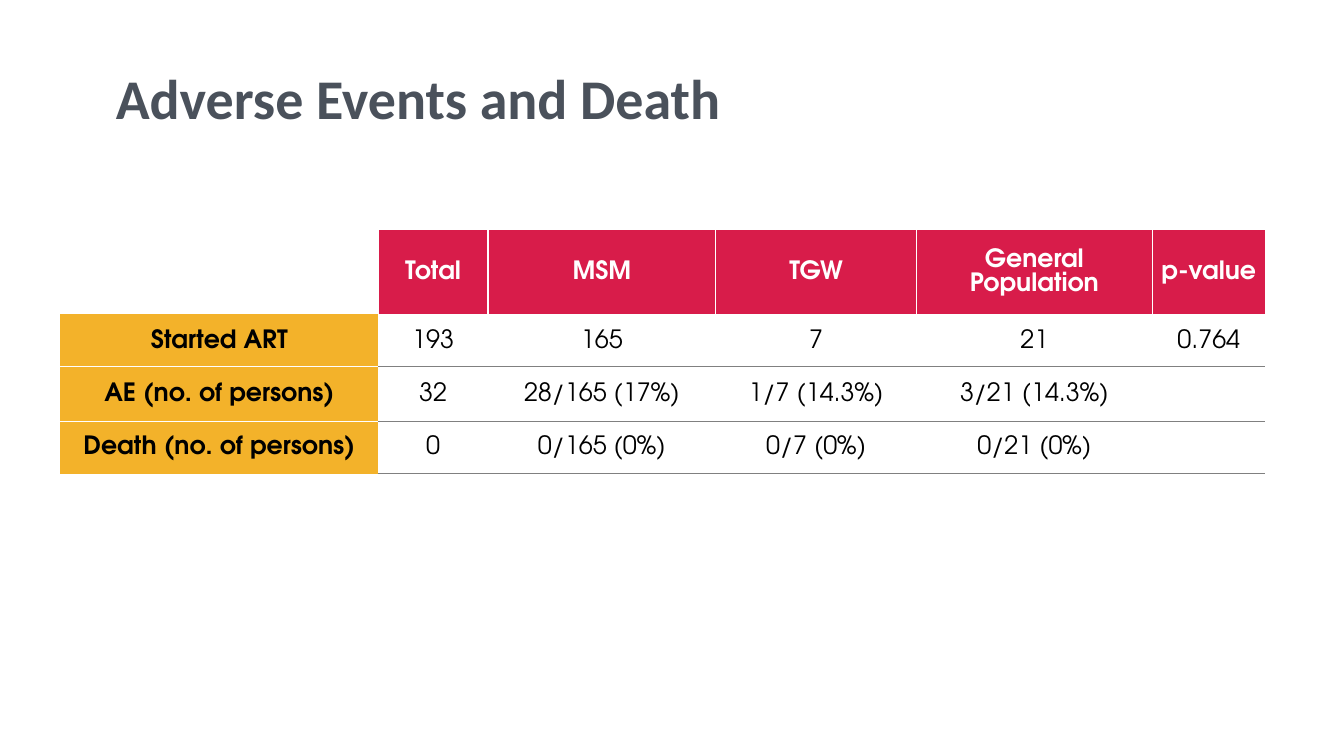
from dataclasses import dataclass

from lxml.etree import SubElement
from pptx import Presentation
from pptx.dml.color import RGBColor as Rgb
from pptx.enum.text import MSO_ANCHOR as Anchor, PP_ALIGN as Align
from pptx.oxml.ns import qn
from pptx.util import Inches, Pt


@dataclass(frozen=True)
class Theme:
    title_font: str = "Calibri"
    table_font: str = "TeX Gyre Adventor"
    title_size: int = 40
    table_size: int = 18
    slate: str = "4A515B"
    crimson: str = "D81C4A"
    gold: str = "F3B22A"
    grey: str = "808080"
    white: str = "FFFFFF"
    black: str = "000000"


HEADINGS = ["", "Total", "MSM", "TGW", "General Population", "p-value"]
OUTCOMES = [
    ["Started ART", "193", "165", "7", "21", "0.764"],
    ["AE (no. of persons)", "32", "28/165 (17%)", "1/7 (14.3%)", "3/21 (14.3%)", ""],
    ["Death (no. of persons)", "0", "0/165 (0%)", "0/7 (0%)", "0/21 (0%)", ""],
]
COLUMN_WIDTHS = [3.15, 1.09, 2.26, 1.99, 2.34, 1.12]
ROW_HEIGHTS = [0.84, 0.52, 0.54, 0.52]


def write(frame, text, *, font, size, color, bold=False, align=Align.LEFT,
          anchor=Anchor.MIDDLE, spacing=1.0):
    frame.word_wrap = True
    frame.vertical_anchor = anchor
    paragraph = frame.paragraphs[0]
    paragraph.alignment = align
    paragraph.line_spacing = spacing
    paragraph.font.size = Pt(size)
    if text:
        run = paragraph.add_run()
        run.text = text
        run.font.name = font
        run.font.size = Pt(size)
        run.font.bold = bold
        run.font.color.rgb = Rgb.from_string(color)


class SlideBuilder:
    def __init__(self, slide, theme):
        self.slide = slide
        self.theme = theme

    def title(self, text, left, top, width, height):
        box = self.slide.shapes.add_textbox(
            Inches(left), Inches(top), Inches(width), Inches(height))
        write(box.text_frame, text, font=self.theme.title_font,
              size=self.theme.title_size, color=self.theme.slate, bold=True,
              anchor=Anchor.BOTTOM, spacing=0.9)

    def table(self, rows, left, top, widths, heights):
        outcomes = self.slide.shapes.add_table(
            len(rows), len(widths), Inches(left), Inches(top),
            Inches(sum(widths)), Inches(sum(heights))).table
        outcomes.first_row = outcomes.horz_banding = False
        for column, width in zip(outcomes.columns, widths):
            column.width = Inches(width)
        for row, height in zip(outcomes.rows, heights):
            row.height = Inches(height)
        for r, texts in enumerate(rows):
            for c, text in enumerate(texts):
                self.cell(outcomes.cell(r, c), text, r, c, len(rows) - 1, len(widths) - 1)

    def cell(self, cell, text, r, c, last_row, last_column):
        theme = self.theme
        header, label = r == 0, c == 0

        def divider(column):
            return theme.white if header and 0 < column <= last_column else None

        def rule(row):
            if row < 1:
                return None
            if not label:
                return theme.grey
            return theme.gold if row == last_row else theme.white

        edges = {"L": divider(c), "R": divider(c + 1), "T": rule(r - 1), "B": rule(r)}
        for side, color in edges.items():
            self.border(cell, side, color)

        fill = theme.white
        if header != label:
            fill = theme.crimson if header else theme.gold
        cell.fill.solid()
        cell.fill.fore_color.rgb = Rgb.from_string(fill)
        cell.margin_left = cell.margin_right = cell.margin_top = Inches(0.01)
        cell.margin_bottom = 0
        cell.vertical_anchor = Anchor.MIDDLE
        write(cell.text_frame, text, font=theme.table_font, size=theme.table_size,
              color=theme.white if header else theme.black,
              bold=header or label, align=Align.CENTER)

    def border(self, cell, side, color):
        properties = cell._tc.get_or_add_tcPr()
        line = SubElement(properties, qn(f"a:ln{side}"), w=str(Pt(1) if color else 0))
        if color:
            SubElement(SubElement(line, qn("a:solidFill")), qn("a:srgbClr"), val=color)
        else:
            SubElement(line, qn("a:noFill"))


def main():
    deck = Presentation()
    deck.slide_width, deck.slide_height = Inches(13.33), Inches(7.5)
    builder = SlideBuilder(deck.slides.add_slide(deck.slide_layouts[6]), Theme())
    builder.title("Adverse Events and Death", 1.05, 0.2, 11.5, 1.16)
    builder.table([HEADINGS, *OUTCOMES], 0.6, 2.28, COLUMN_WIDTHS, ROW_HEIGHTS)
    deck.save("out.pptx")


if __name__ == "__main__":
    main()
